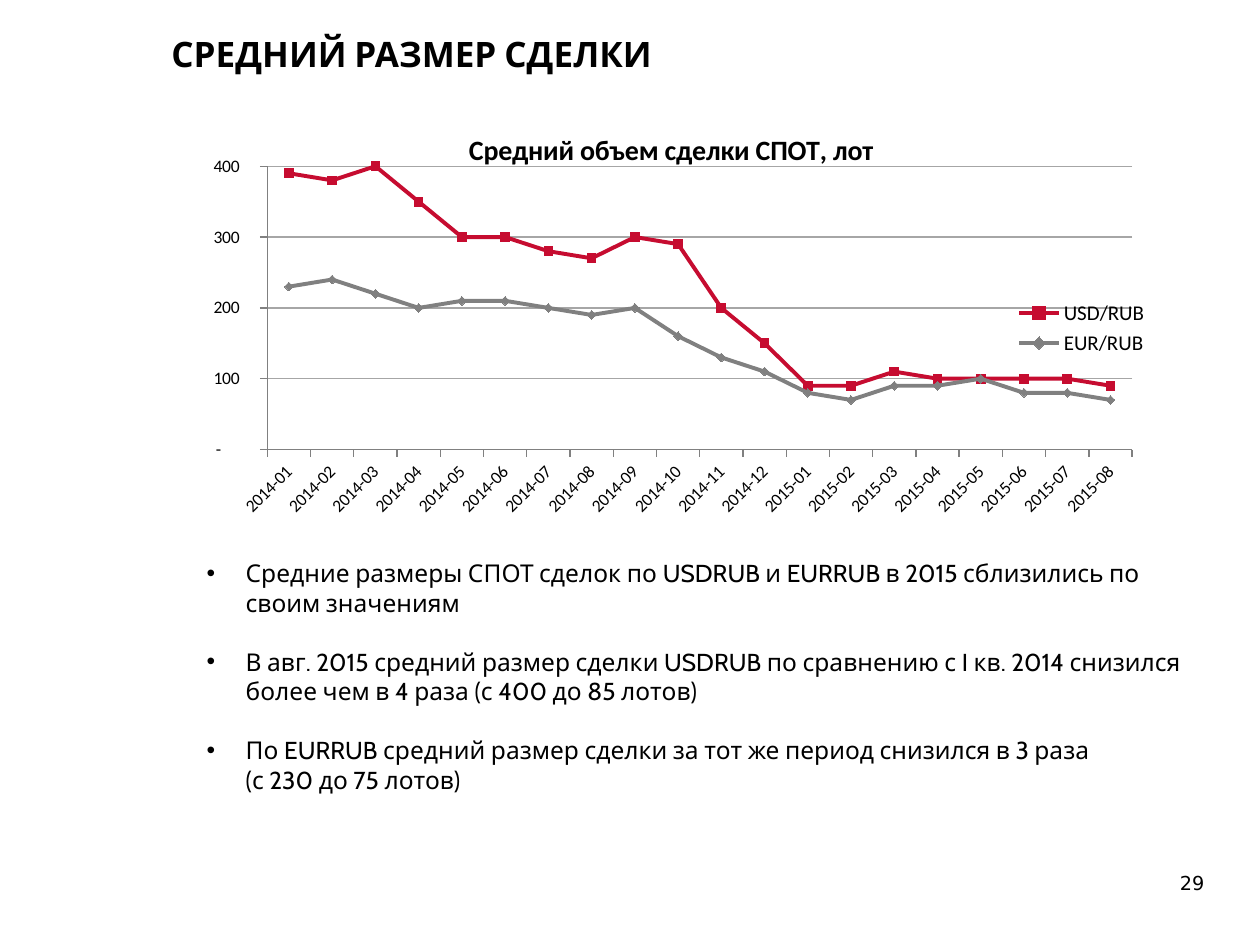
from lxml import etree
from pptx import Presentation
from pptx.chart.data import CategoryChartData as Data
from pptx.dml.color import RGBColor as RGB
from pptx.enum.chart import (XL_CHART_TYPE as Kind, XL_LEGEND_POSITION as Spot,
                             XL_MARKER_STYLE as Mark, XL_TICK_MARK as Tick)
from pptx.enum.text import MSO_ANCHOR as Anchor, MSO_AUTO_SIZE as Fit, PP_ALIGN as Align
from pptx.oxml import parse_xml
from pptx.oxml.ns import nsdecls, qn
from pptx.util import Inches, Pt

INK = {"text": "000000", "usd": "C60C30", "eur": "808080",
       "axis": "808080", "grid": "A6A6A6"}
COLS, ROWS = 100, 75  # grid over the whole slide
FORMAT = '_-* #,##0_р_._-;\\-* #,##0_р_._-;_-* "-"??_р_._-;_-@_-'

MONTHS = [f"{year}-{month:02}" for year, last in ((2014, 12), (2015, 8))
          for month in range(1, last + 1)]
# name, colour, marker, values
LINES = [
    ("USD/RUB", "usd", Mark.SQUARE,
     [390, 380, 400, 350, 300, 300, 280, 270, 300, 290,
      200, 150, 90, 90, 110, 100, 100, 100, 100, 90]),
    ("EUR/RUB", "eur", Mark.DIAMOND,
     [230, 240, 220, 200, 210, 210, 200, 190, 200, 160,
      130, 110, 80, 70, 90, 90, 100, 80, 80, 70]),
]
POINTS = [
    "Средние размеры СПОТ сделок по USDRUB и EURRUB в 2015 сблизились "
    "по своим значениям",
    "В авг. 2015 средний размер сделки USDRUB по сравнению с I кв. 2014 "
    "снизился более чем в 4 раза (с 400 до 85 лотов)",
    "По EURRUB средний размер сделки за тот же период снизился в 3 раза \n"
    "(с 230 до 75 лотов)",
]


def style(font, size, face, ink="text", bold=False):
    font.size, font.name, font.bold = Pt(size), face, bold
    font.color.rgb = RGB.from_string(INK[ink])


def write(para, text, align=Align.LEFT, space=1, after=0, **look):
    para.text = text
    para.alignment, para.line_spacing = align, space
    para.space_before, para.space_after = Pt(0), Pt(after)
    for run in para.runs:
        style(run.font, **look)


def stroke(line, ink, width):
    line.color.rgb = RGB.from_string(INK[ink])
    line.width = Pt(width)


def layout(**parts):
    """Manual chart layout, in shares of the chart's size."""
    node = parse_xml(f'<c:layout {nsdecls("c")}><c:manualLayout/></c:layout>')
    for tag, val in parts.items():
        etree.SubElement(node[0], qn(f"c:{tag}"), val=str(val))
    return node


class Page:
    def __init__(self, deck):
        self.deck = deck
        self.slide = deck.slides.add_slide(deck.slide_layouts[1])
        self.face, self.plain = "Cabin", "Calibri"

    def area(self, col, row, wide, high):
        dx, dy = self.deck.slide_width / COLS, self.deck.slide_height / ROWS
        return int(col * dx), int(row * dy), int(wide * dx), int(high * dy)

    def place(self, shape, *box):
        shape.left, shape.top, shape.width, shape.height = self.area(*box)
        frame = shape.text_frame
        frame.word_wrap, frame.auto_size = True, Fit.NONE
        frame.vertical_anchor = Anchor.TOP
        return frame

    def title(self, text, *box):
        frame = self.place(self.slide.shapes.title, *box)
        write(frame.paragraphs[0], text, size=20, face=self.face, bold=True)

    def bullets(self, items, *box):
        frame = self.place(self.slide.placeholders[1], *box)
        for num, item in enumerate(items):
            para = frame.add_paragraph() if num else frame.paragraphs[0]
            write(para, item, after=17, size=14, face=self.face)
            props = para._p.get_or_add_pPr()
            props.set("marL", str(Inches(0.31)))
            props.set("indent", str(-Inches(0.31)))
            etree.SubElement(props, qn("a:buFont"), typeface="Arial")
            etree.SubElement(props, qn("a:buChar"), char="•")

    def number(self, text, *box):
        frame = self.place(self.slide.shapes.add_textbox(*self.area(*box)), *box)
        frame.margin_left = frame.margin_right = 0
        write(frame.paragraphs[0], text, align=Align.RIGHT, space=1.5,
              size=11, face="DejaVu Sans")

    def chart(self, head, *box):
        data = Data()
        data.categories = MONTHS
        for name, _, _, vals in LINES:
            data.add_series(name, vals)
        chart = self.slide.shapes.add_chart(
            Kind.LINE_MARKERS, *self.area(*box), data).chart
        style(chart.font, 10, self.plain)

        # Title and plot area
        chart.has_title = True
        write(chart.chart_title.text_frame.paragraphs[0], head,
              align=Align.CENTER, size=16, face=self.plain, bold=True)
        title = chart.chart_title._element
        for old in title.findall(qn("c:layout")):
            title.remove(old)
        title.find(qn("c:tx")).addnext(
            layout(xMode="edge", yMode="edge", x=0.29, y=0.05))
        chart.chart_title.include_in_layout = False
        plot = chart._chartSpace.chart.plotArea
        for old in plot.findall(qn("c:layout")):
            plot.remove(old)
        plot.insert(0, layout(layoutTarget="inner", xMode="edge", yMode="edge",
                              x=0.09, y=0.14, w=0.88, h=0.63))

        # Legend over the plot
        chart.has_legend = True
        legend = chart.legend
        legend.position, legend.include_in_layout = Spot.RIGHT, False
        style(legend.font, 12, self.plain)
        legend._element.find(qn("c:legendPos")).addnext(
            layout(xMode="edge", yMode="edge", x=0.76, y=0.14, w=0.14, h=0.15))

        # Axes
        cat, val = chart.category_axis, chart.value_axis
        for axis in (cat, val):
            axis.major_tick_mark, axis.minor_tick_mark = Tick.OUTSIDE, Tick.NONE
            stroke(axis.format.line, "axis", 0.75)
            style(axis.tick_labels.font, 10, self.plain)
        cat.tick_labels.font._element.getparent().getparent().getparent().find(
            qn("a:bodyPr")).set("rot", str(-45 * 60000))
        val.minimum_scale, val.maximum_scale, val.major_unit = 0, 400, 100
        val.tick_labels.number_format = FORMAT
        val.tick_labels.number_format_is_linked = False
        stroke(val.major_gridlines.format.line, "grid", 0.75)

        # Series
        chart.plots[0].vary_by_categories = False
        for line, (_, ink, mark, _) in zip(chart.plots[0].series, LINES):
            line.smooth = False
            stroke(line.format.line, ink, 2.25)
            line.marker.style, line.marker.size = mark, 5
            line.marker.format.fill.solid()
            line.marker.format.fill.fore_color.rgb = RGB.from_string(INK[ink])
            stroke(line.marker.format.line, ink, 0.75)


def main():
    deck = Presentation()
    deck.slide_width, deck.slide_height = Inches(10), Inches(7.5)
    page = Page(deck)
    page.number("29", 91.7, 67.7, 3.9, 3.9)
    page.title("СРЕДНИЙ РАЗМЕР СДЕЛКИ", 12.6, 2.1, 81.1, 12.3)
    page.chart("Средний объем сделки СПОТ, лот", 14.2, 8.2, 78, 35.7)
    page.bullets(POINTS, 15.4, 43.8, 80.7, 22.2)
    deck.save("out.pptx")


if __name__ == "__main__":
    main()
